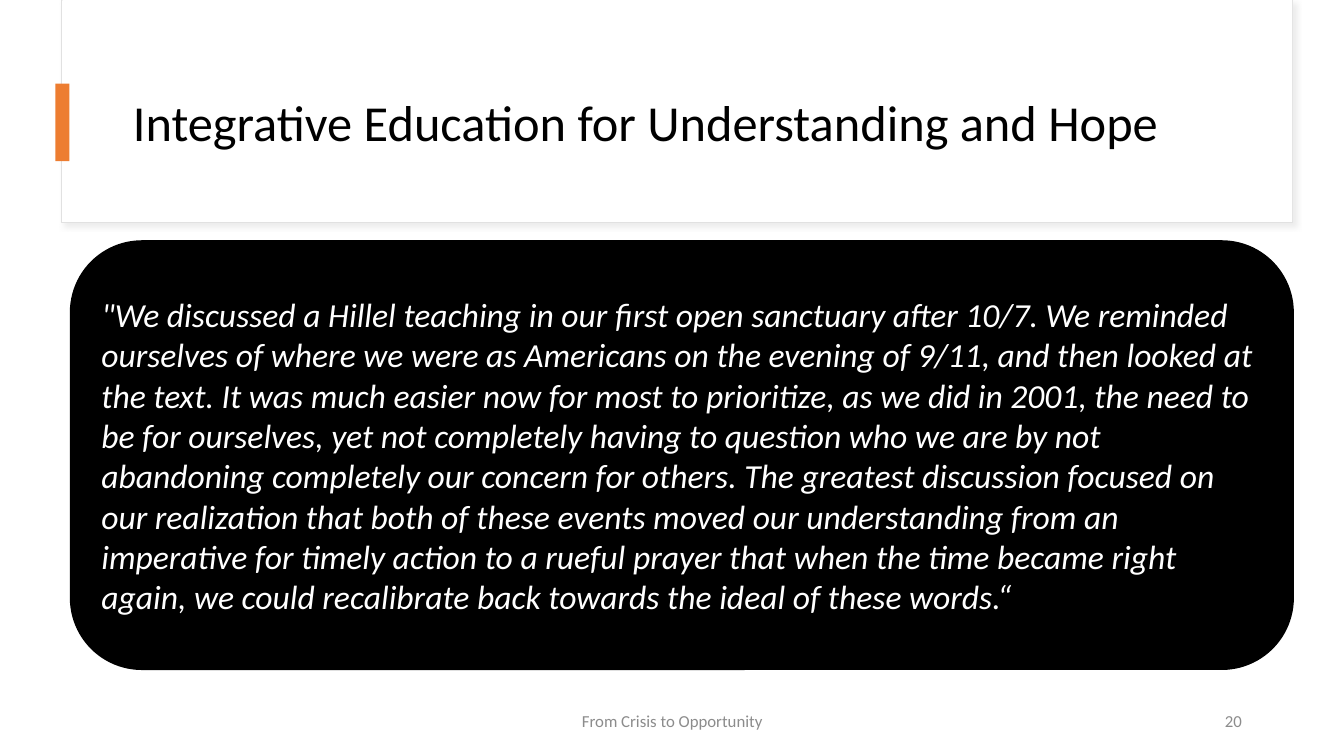
from lxml.etree import SubElement
from pptx import Presentation
from pptx.dml.color import RGBColor
from pptx.enum.shapes import MSO_SHAPE as Kind
from pptx.enum.text import MSO_ANCHOR as Anchor, PP_ALIGN as Align
from pptx.oxml.ns import qn
from pptx.util import Pt

BLACK = RGBColor(0, 0, 0)
WHITE = RGBColor(255, 255, 255)
GREY = RGBColor(0x8C, 0x8C, 0x8C)
EDGE = RGBColor(0xE1, 0xE1, 0xE1)
SHADE = RGBColor(0xD9, 0xD9, 0xD9)
ORANGE = RGBColor(0xED, 0x7D, 0x31)

TITLE = "Integrative Education for Understanding and Hope"
QUOTE = (
    '"We discussed a Hillel teaching in our first open sanctuary after 10/7. '
    "We reminded ourselves of where we were as Americans on the evening of 9/11, "
    "and then looked at the text. It was much easier now for most to prioritize, "
    "as we did in 2001, the need to be for ourselves, yet not completely having "
    "to question who we are by not abandoning completely our concern for others. "
    "The greatest discussion focused on our realization that both of these events "
    "moved our understanding from an imperative for timely action to a rueful "
    "prayer that when the time became right again, we could recalibrate back "
    "towards the ideal of these words.“"
)

# Boxes are left, top, width, height in points.
FRAME = (43.92, 0, 879.12, 159.12)
PANEL = (44.64, 0, 878.4, 158.4)
ACCENT = (39.6, 59.76, 10.08, 55.44)
CARD = (50.4, 172.08, 873.36, 306)
HEAD = (87.84, 43.2, 824.4, 92.88)
FOOT_TOP, FOOT_HIGH = 500.4, 28.8
NOTES = [
    ("20", 678.24, 216, Align.RIGHT),
    ("From Crisis to Opportunity", 318.24, 324, Align.CENTER),
]


def add_block(slide, kind, box, fill, edge=None, width=0.75):
    shape = slide.shapes.add_shape(kind, *map(Pt, box))
    shape.shadow.inherit = False
    shape.fill.solid()
    shape.fill.fore_color.rgb = fill
    if edge is None:
        shape.line.fill.background()
    else:
        shape.line.color.rgb = edge
        shape.line.width = Pt(width)
    return shape


def write(shape, text, size, color, align=Align.LEFT, space=None, italic=False):
    frame = shape.text_frame
    frame.word_wrap = True
    frame.vertical_anchor = Anchor.MIDDLE
    para = frame.paragraphs[0]
    para.alignment = align
    para.line_spacing = space
    run = para.add_run()
    run.text = text
    look = {"name": "Calibri", "size": Pt(size), "italic": italic}
    for key, value in look.items():
        setattr(run.font, key, value)
    run.font.color.rgb = color


def add_shadow(shape, blur, dist, angle, alpha):
    effects = shape._element.spPr.find(qn("a:effectLst"))
    outer = SubElement(
        effects, qn("a:outerShdw"), blurRad=str(Pt(blur)), dist=str(Pt(dist)),
        dir=str(angle * 60000), algn="tl", rotWithShape="0")
    color = SubElement(outer, qn("a:srgbClr"), val=str(SHADE))
    SubElement(color, qn("a:alpha"), val=str(alpha * 1000))


def main():
    deck = Presentation()
    deck.slide_width, deck.slide_height = Pt(960), Pt(540)
    slide = deck.slides.add_slide(deck.slide_layouts[6])

    frame = add_block(slide, Kind.RECTANGLE, FRAME, WHITE, EDGE)
    add_shadow(frame, blur=4, dist=3, angle=45, alpha=50)
    add_block(slide, Kind.RECTANGLE, PANEL, WHITE)
    head = slide.shapes.add_textbox(*map(Pt, HEAD))
    write(head, TITLE, 36, BLACK, space=0.9)
    add_block(slide, Kind.RECTANGLE, ACCENT, ORANGE)

    for text, left, width, align in NOTES:
        box = (left, FOOT_TOP, width, FOOT_HIGH)
        note = slide.shapes.add_textbox(*map(Pt, box))
        write(note, text, 12, GREY, align)

    card = add_block(slide, Kind.ROUNDED_RECTANGLE, CARD, BLACK, BLACK, 1)
    write(card, QUOTE, 24, WHITE, italic=True)
    deck.save("out.pptx")


if __name__ == "__main__":
    main()
